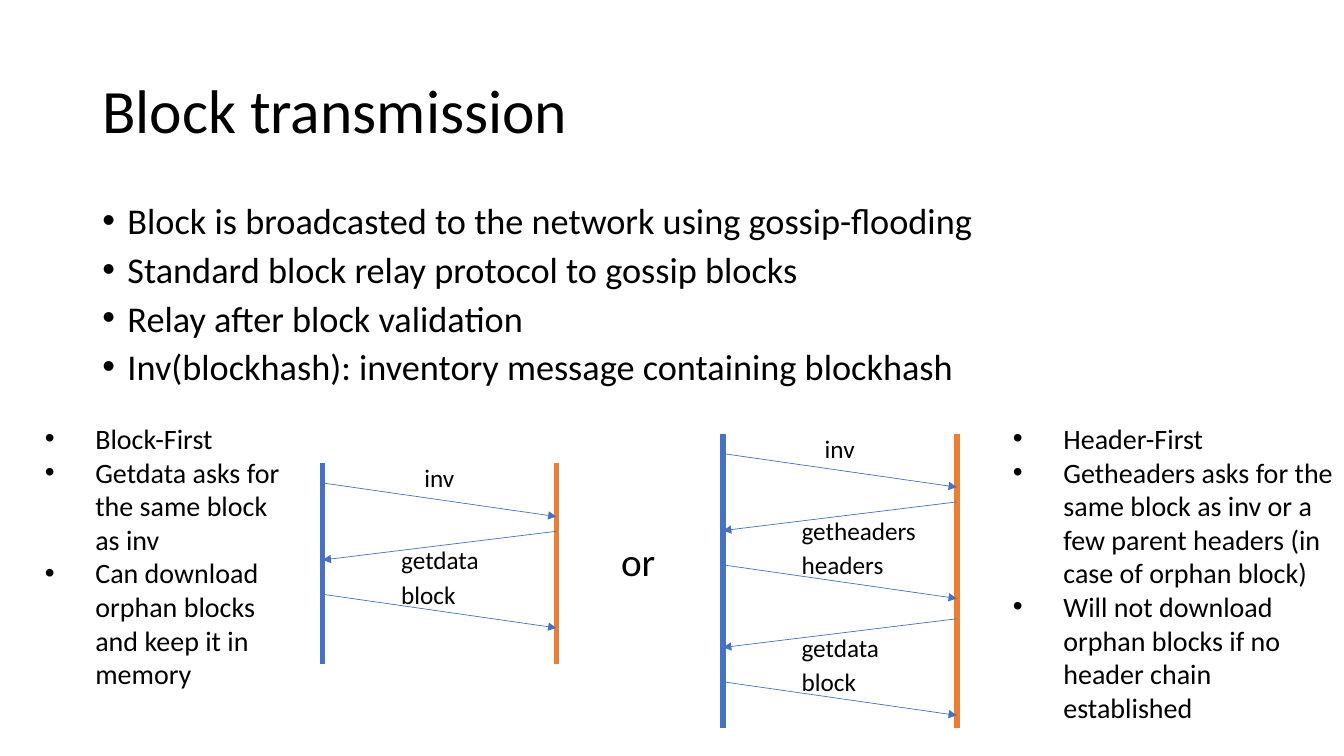
from collections import namedtuple

from lxml import etree
from pptx import Presentation
from pptx import util as u
from pptx.dml import color
from pptx.enum import shapes, text
from pptx.oxml import ns

Box = namedtuple("Box", "left top width height")

COLORS = {"ink": "000000", "sender": "4472C4", "receiver": "ED7D31", "paper": "FFFFFF"}
FONT = "Calibri"

ARROWS = {
    "inv": {"drop": 24, "back": False, "indent": 65.5, "rise": -18},
    "request": {"drop": 20.5, "back": True, "indent": 49, "rise": 6},
    "reply": {"drop": 24, "back": False, "indent": 49, "rise": -14.5},
}
LABEL_WIDTHS = {"inv": 36, "getdata": 70.5, "block": 54, "getheaders": 97, "headers": 73.5}
BLOCK_FIRST = [
    ("inv", "inv", 14),
    ("request", "getdata", 48.5),
    ("reply", "block", 93.5),
]
HEADER_FIRST = [
    ("inv", "inv", 14),
    ("request", "getheaders", 48.5),
    ("reply", "headers", 93.5),
    ("request", "getdata", 132),
    ("reply", "block", 177),
]


def rgb(name):
    return color.RGBColor.from_string(COLORS[name])


def add_bullet(para, indent):
    props = para._p.get_or_add_pPr()
    props.set("marL", str(u.Pt(indent)))
    props.set("indent", str(-u.Pt(indent)))
    etree.SubElement(props, ns.qn("a:buFont")).set("typeface", "Arial")
    etree.SubElement(props, ns.qn("a:buChar")).set("char", "•")


def add_text(page, box, lines, size, indent=0, wrap=True, middle=False, spacing=None):
    frame = page.shapes.add_textbox(*map(u.Pt, box)).text_frame
    frame_format = {
        "word_wrap": wrap,
        "auto_size": text.MSO_AUTO_SIZE.NONE if spacing else text.MSO_AUTO_SIZE.SHAPE_TO_FIT_TEXT,
        "vertical_anchor": text.MSO_ANCHOR.MIDDLE if middle else text.MSO_ANCHOR.TOP,
    }
    for name, value in frame_format.items():
        setattr(frame, name, value)
    for number, line in enumerate(lines):
        para = frame.add_paragraph() if number else frame.paragraphs[0]
        for name, value in (spacing or {}).items():
            setattr(para, name, value)
        if indent:
            add_bullet(para, indent)
        span = para.add_run()
        span.text = line
        for name, value in {"name": FONT, "size": u.Pt(size)}.items():
            setattr(span.font, name, value)
        span.font.color.rgb = rgb("ink")


def add_line(page, start, end, shade, width, arrow=False):
    points = map(u.Pt, (*start, *end))
    line = page.shapes.add_connector(shapes.MSO_CONNECTOR.STRAIGHT, *points)
    line.line.color.rgb = rgb(shade)
    line.line.width = u.Pt(width)
    if arrow:
        etree.SubElement(line.line._get_or_add_ln(), ns.qn("a:tailEnd")).set("type", "triangle")
    etree.SubElement(line._element.spPr, ns.qn("a:effectLst"))


def add_heading(page, box):
    add_text(page, box, ["Block transmission"], 44, middle=True, spacing={"line_spacing": 0.9})


def add_overview(page, box):
    lines = [
        "Block is broadcasted to the network using gossip-flooding",
        "Standard block relay protocol to gossip blocks",
        "Relay after block validation",
        "Inv(blockhash): inventory message containing blockhash",
    ]
    spacing = {"line_spacing": 0.8, "space_before": u.Pt(10)}
    add_text(page, box, lines, 25.9, indent=18, spacing=spacing)


def add_exchange(page, box, messages):
    right = box.left + box.width
    for x, shade in ((box.left, "sender"), (right, "receiver")):
        add_line(page, (x, box.top), (x, box.top + box.height), shade, 4)
    for kind, label, offset in messages:
        arrow = ARROWS[kind]
        y = box.top + offset
        start, end = (right, box.left) if arrow["back"] else (box.left, right)
        add_line(page, (start, y), (end, y + arrow["drop"]), "sender", 0.5, arrow=True)
        label_box = Box(box.left + arrow["indent"], y + arrow["rise"], LABEL_WIDTHS[label], 29)
        add_text(page, label_box, [label], 18, wrap=False)


def add_notes_column(page, box, lines):
    add_text(page, box, lines, 20, indent=36)


def build_page(page):
    page.background.fill.solid()
    page.background.fill.fore_color.rgb = rgb("paper")
    add_heading(page, Box(66, 29, 828, 104.5))
    add_overview(page, Box(66, 144, 798, 144))
    add_exchange(page, Box(230.5, 331, 167, 143.5), BLOCK_FIRST)
    add_exchange(page, Box(516.5, 310, 167, 210), HEADER_FIRST)
    add_text(page, Box(436.5, 380, 39.5, 41), ["or"], 28, wrap=False)
    add_notes_column(page, Box(25, 297.5, 189.5, 225.5), [
        "Block-First",
        "Getdata asks for the same block as inv",
        "Can download orphan blocks and keep it in memory",
    ])
    add_notes_column(page, Box(716.5, 297.5, 243.5, 250), [
        "Header-First",
        "Getheaders asks for the same block as inv or a few parent headers (in case of orphan block)",
        "Will not download orphan blocks if no header chain established",
    ])


def main():
    deck = Presentation()
    deck.slide_width, deck.slide_height = u.Pt(960), u.Pt(540)
    build_page(deck.slides.add_slide(deck.slide_layouts[6]))
    deck.save("out.pptx")


if __name__ == "__main__":
    main()
